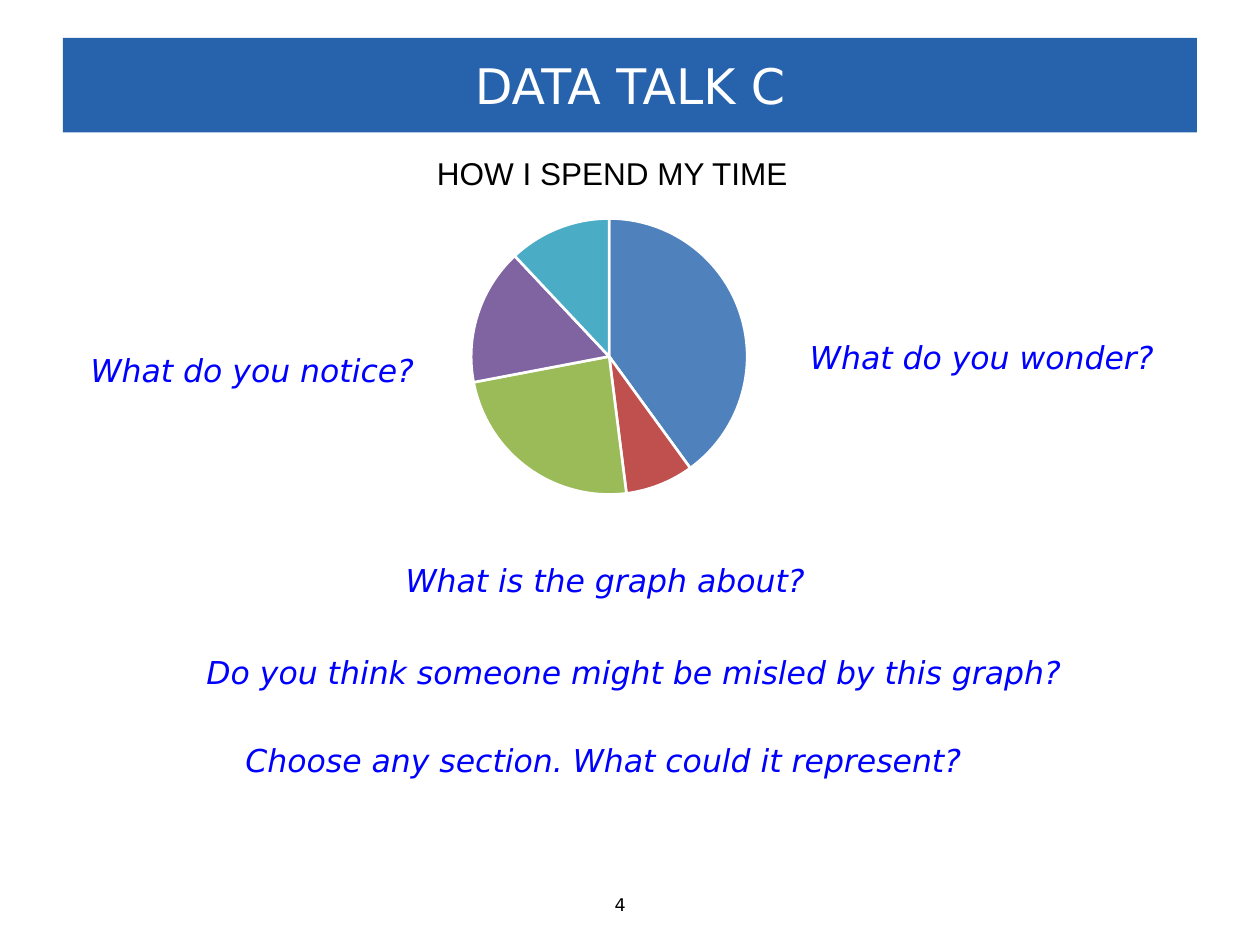
from dataclasses import dataclass

import lxml.etree
import pptx
import pptx.chart.data
import pptx.dml.color
import pptx.enum.chart
import pptx.enum.shapes
import pptx.enum.text
import pptx.oxml.ns
import pptx.util

Inches = pptx.util.Inches
ALIGN = pptx.enum.text.PP_ALIGN


def color(value: str) -> pptx.dml.color.RGBColor:
    return pptx.dml.color.RGBColor.from_string(value)


@dataclass(frozen=True)
class Theme:
    banner: str = "2762AD"
    white: str = "FFFFFF"
    black: str = "000000"
    question: str = "0000FF"
    slices: tuple = ("4F81BD", "C0504D", "9BBB59", "8064A2", "4BACC6")
    main_font: str = "DejaVu Sans"
    heading_font: str = "Arial"
    chart_font: str = "Calibri"
    title_size: int = 28
    body_size: int = 18
    small_size: int = 10


THEME = Theme()


@dataclass(frozen=True)
class Label:
    text: str
    left: float
    top: float
    width: float
    height: float = 0.4
    font: str = THEME.main_font
    size: int = THEME.body_size
    color: str = THEME.question
    italic: bool = True
    wrap: bool = False
    align: ALIGN = ALIGN.LEFT


LABELS = (
    Label("4", 4.78, 7.05, 0.44, 0.27, size=THEME.small_size,
          color=THEME.black, italic=False),
    Label("HOW I SPEND MY TIME", 2.66, 1.17, 4.4, font=THEME.heading_font,
          color=THEME.black, italic=False, wrap=True, align=ALIGN.CENTER),
    Label("What do you notice?", 0.62, 2.74, 2.81),
    Label("What do you wonder?", 6.33, 2.63, 2.98),
    Label("What is the graph about?", 3.12, 4.4, 3.42),
    Label("Do you think someone might be misled by this graph?", 1.54, 5.13, 7.1),
    Label("Choose any section. What could it represent?", 1.85, 5.83, 5.96),
)


def write_text(shape, label: Label) -> None:
    para = shape.text_frame.paragraphs[0]
    para.alignment = label.align
    span = para.add_run()
    span.text = label.text
    formats = {
        "name": label.font,
        "size": pptx.util.Pt(label.size),
        "italic": label.italic,
    }
    for name, value in formats.items():
        setattr(span.font, name, value)
    span.font.color.rgb = color(label.color)


def add_label(page, label: Label) -> None:
    box = page.shapes.add_textbox(Inches(label.left), Inches(label.top),
                                  Inches(label.width), Inches(label.height))
    box.text_frame.word_wrap = label.wrap
    box.text_frame.auto_size = pptx.enum.text.MSO_AUTO_SIZE.SHAPE_TO_FIT_TEXT
    write_text(box, label)


def add_banner(page) -> None:
    title = Label("DATA TALK C", 0.5, 0.3, 9, 0.75, size=THEME.title_size,
                  color=THEME.white, italic=False, align=ALIGN.CENTER)
    banner = page.shapes.add_shape(
        pptx.enum.shapes.MSO_SHAPE.RECTANGLE, Inches(title.left),
        Inches(title.top), Inches(title.width), Inches(title.height))
    banner.shadow.inherit = False
    banner.fill.solid()
    banner.fill.fore_color.rgb = color(THEME.banner)
    banner.line.fill.background()
    banner.text_frame.vertical_anchor = pptx.enum.text.MSO_ANCHOR.MIDDLE
    write_text(banner, title)


def set_plot_layout(chart, share: float) -> None:
    plot_area = chart.plots[0]._element.getparent()
    qn = pptx.oxml.ns.qn
    for old_layout in plot_area.findall(qn("c:layout")):
        plot_area.remove(old_layout)
    layout = lxml.etree.Element(qn("c:layout"))
    manual = lxml.etree.SubElement(layout, qn("c:manualLayout"))
    margin = (1 - share) / 2
    values = {"layoutTarget": "inner", "xMode": "edge", "yMode": "edge",
              "x": margin, "y": margin, "w": share, "h": share}
    for name, value in values.items():
        lxml.etree.SubElement(manual, qn(f"c:{name}")).set("val", str(value))
    plot_area.insert(0, layout)


def add_time_pie(page) -> None:
    chart_data = pptx.chart.data.CategoryChartData()
    chart_data.categories = ["1", "2", "3", "4", "5"]
    chart_data.add_series("Series 1", (40, 8, 24, 16, 12))
    chart = page.shapes.add_chart(
        pptx.enum.chart.XL_CHART_TYPE.PIE, Inches(3.59), Inches(1.58),
        Inches(2.49), Inches(2.5), chart_data).chart
    chart.has_title = False
    chart.has_legend = False
    chart.font.name = THEME.chart_font
    chart.font.size = pptx.util.Pt(THEME.small_size)
    chart.font.color.rgb = color(THEME.black)
    plot = chart.plots[0]
    plot.vary_by_categories = True
    for index, slice_color in enumerate(THEME.slices):
        point = plot.series[0].points[index]
        point.format.fill.solid()
        point.format.fill.fore_color.rgb = color(slice_color)
        point.format.line.color.rgb = color(THEME.white)
        point.format.line.width = pptx.util.Pt(1.5)
    set_plot_layout(chart, 0.88)


def main() -> None:
    deck = pptx.Presentation()
    deck.slide_width, deck.slide_height = Inches(10), Inches(7.5)
    page = deck.slides.add_slide(deck.slide_layouts[6])
    add_banner(page)
    add_time_pie(page)
    for label in LABELS:
        add_label(page, label)
    deck.save("out.pptx")


if __name__ == "__main__":
    main()
